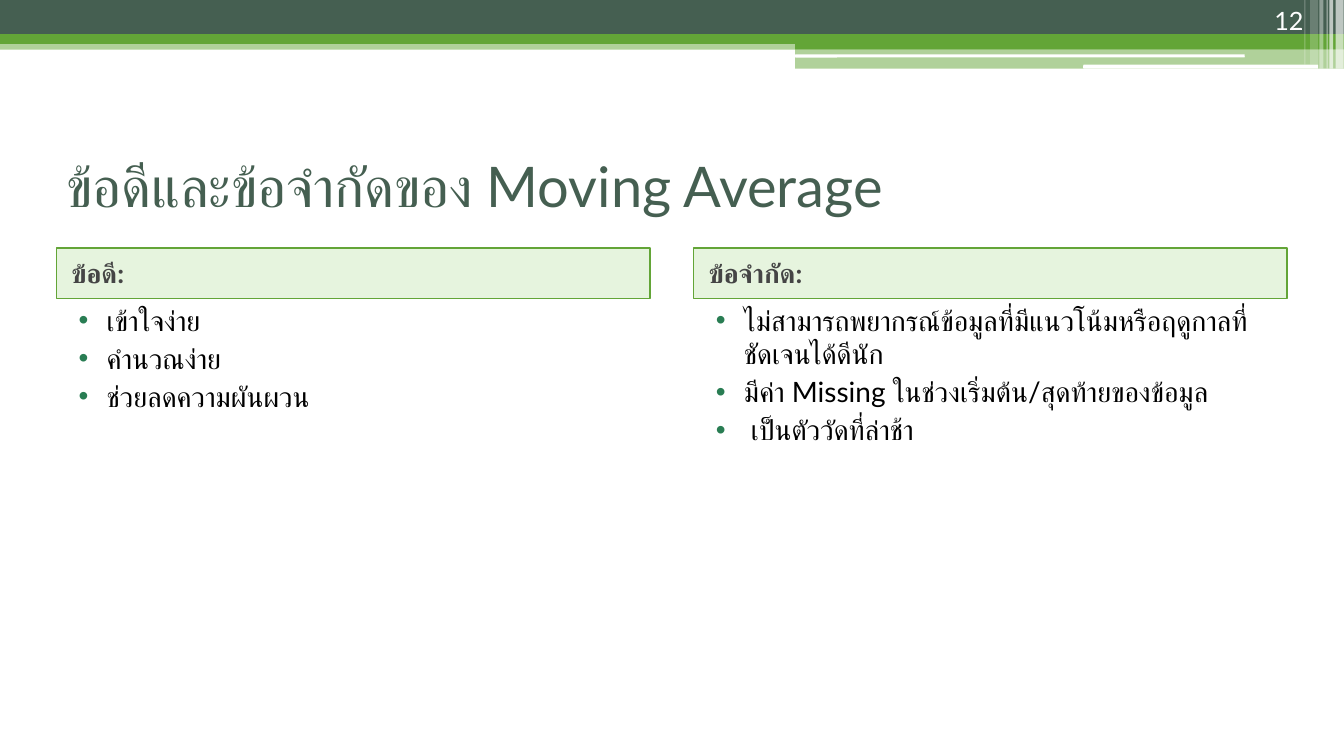
from lxml import etree
from pptx import Presentation
from pptx.dml.color import RGBColor
from pptx.enum.shapes import MSO_SHAPE
from pptx.enum.text import MSO_ANCHOR, PP_ALIGN
from pptx.oxml.ns import qn
from pptx.util import Cm, Pt

RECT, ROUND = MSO_SHAPE.RECTANGLE, MSO_SHAPE.ROUNDED_RECTANGLE
TOP, MIDDLE, BOTTOM = MSO_ANCHOR.TOP, MSO_ANCHOR.MIDDLE, MSO_ANCHOR.BOTTOM
LEFT, RIGHT = PP_ALIGN.LEFT, PP_ALIGN.RIGHT

TITLE = "ข้อดีและข้อจำกัดของ Moving Average"
NUMBER = "12"
COLUMNS = [
    ("ข้อดี:", ["เข้าใจง่าย", "คำนวณง่าย", "ช่วยลดความผันผวน"]),
    ("ข้อจำกัด:", [
        "ไม่สามารถพยากรณ์ข้อมูลที่มีแนวโน้มหรือฤดูกาลที่ชัดเจนได้ดีนัก",
        "มีค่า Missing ในช่วงเริ่มต้น/สุดท้ายของข้อมูล",
        " เป็นตัววัดที่ล่าช้า",
    ]),
]

THEME = {
    "font": "Lato",
    "dark": "455F51", "green": "63A537", "pale": "9FD47D", "white": "FFFFFF",
    "ink": "000000", "gray": "454545", "dot": "297D53",
    "title": 40, "head": 19, "body": 20, "number": 18,
}

WIDE, HIGH = 33.87, 19.05
HALF = 20.04
BANDS = [
    (RECT, 0, 1.02, WIDE, 0.23, "green", 50),
    (RECT, 0, 0, WIDE, 0.86, "dark", 100),
    (RECT, 0, 0.86, WIDE, 0.25, "green", 100),
    (RECT, HALF, 0.99, WIDE - HALF, 0.25, "green", 100),
    (RECT, HALF, 1.22, WIDE - HALF, 0.51, "green", 50),
    (ROUND, HALF, 1.37, 11.33, 0.08, "white", 100),
    (ROUND, 27.3, 1.63, 5.92, 0.1, "white", 100),
]
STRIPES = [
    (33.66, 0.2, 1.73, 65), (33.5, 0.1, 1.73, 65), (33.43, 0.03, 1.73, 60),
    (33.25, 0.1, 1.73, 40), (33.02, 0.2, 1.63, 20), (32.87, 0.03, 1.63, 30),
]
EDGE, STEP, COLUMN = 1.42, 16.06, 14.96
HEAD_TOP, HEAD_HIGH, LIST_HIGH = 6.25, 1.27, 10.8


def color(key):
    return RGBColor.from_string(THEME[key])


def block(slide, kind, x, y, w, h, fill, alpha=100, line=None):
    shape = slide.shapes.add_shape(kind, Cm(x), Cm(y), Cm(w), Cm(h))
    shape.shadow.inherit = False
    shape.fill.solid()
    shape.fill.fore_color.rgb = color(fill)
    if alpha < 100:
        tone = shape.fill._xPr.find(".//" + qn("a:srgbClr"))
        etree.SubElement(tone, qn("a:alpha"), val=str(alpha * 1000))
    if line:
        shape.line.color.rgb = color(line)
        shape.line.width = Pt(1)
    else:
        shape.line.fill.background()
    return shape


def label(slide, x, y, w, h):
    return slide.shapes.add_textbox(Cm(x), Cm(y), Cm(w), Cm(h))


def indent(para, left, first=0, dot=False):
    props = para._p.get_or_add_pPr()
    props.set("marL", str(Cm(left)))
    props.set("indent", str(Cm(first)))
    if dot:
        tint = etree.SubElement(props, qn("a:buClr"))
        etree.SubElement(tint, qn("a:srgbClr"), val=THEME["dot"])
        etree.SubElement(props, qn("a:buFont"), typeface="Arial")
        etree.SubElement(props, qn("a:buChar"), char="•")


def write(shape, lines, size, ink, anchor=MIDDLE, align=LEFT, bold=False, inset=None):
    frame = shape.text_frame
    frame.word_wrap = True
    frame.vertical_anchor = anchor
    for i, line in enumerate(lines):
        para = frame.add_paragraph() if i else frame.paragraphs[0]
        para.text = line
        if inset:
            indent(para, *inset)
        para.alignment = align
        if i:
            para.space_before = Pt(3)
        font = para.font
        font.name = THEME["font"]
        font.size = Pt(THEME[size])
        font.bold = bold
        font.color.rgb = color(ink)


def main():
    deck = Presentation()
    deck.slide_width, deck.slide_height = Cm(WIDE), Cm(HIGH)
    slide = deck.slides.add_slide(deck.slide_layouts[6])
    for band in BANDS:
        block(slide, *band)
    for x, w, h, alpha in STRIPES:
        block(slide, RECT, x, 0, w, h, "white", alpha)
    write(label(slide, EDGE, 3.18, 31.04, 2.97), [TITLE], "title", "dark")
    for i, (head, items) in enumerate(COLUMNS):
        x = EDGE + i * STEP
        bar = block(slide, RECT, x, HEAD_TOP, COLUMN, HEAD_HIGH, "pale", 25, "green")
        write(bar, [head], "head", "gray", bold=True, inset=(0.13,))
        area = label(slide, x, HEAD_TOP + HEAD_HIGH, COLUMN, LIST_HIGH)
        write(area, items, "body", "ink", TOP, inset=(1.02, -0.71, True))
    write(label(slide, 30.28, 0, 2.82, 1.02), [NUMBER], "number", "white", BOTTOM, RIGHT)
    deck.save("out.pptx")


if __name__ == "__main__":
    main()
